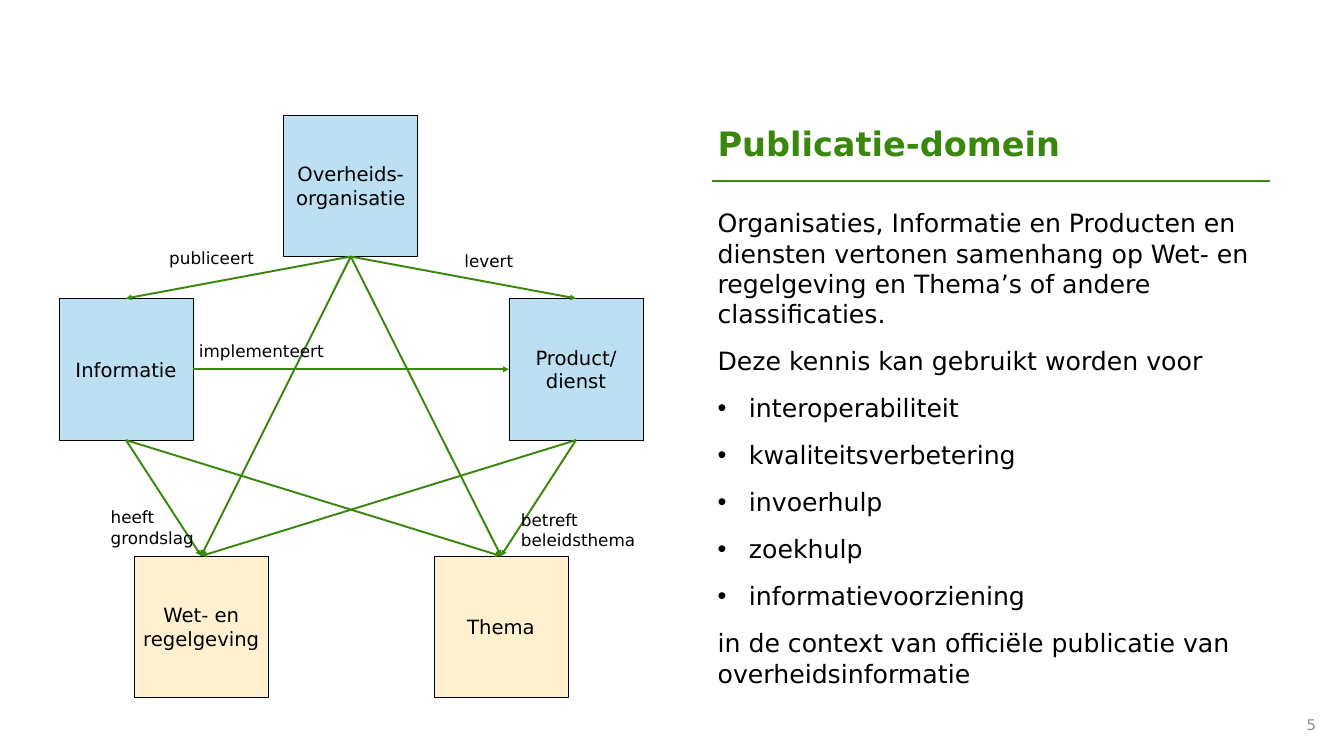
from lxml import etree
from pptx import Presentation
from pptx import util as u
from pptx.dml.color import RGBColor
from pptx.enum import shapes, text
from pptx.oxml import ns

GREEN = RGBColor(0x39, 0x87, 0x0C)
BLUE = RGBColor(0xBC, 0xDF, 0xF1)
CREAM = RGBColor(0xFF, 0xF0, 0xD0)
BLACK = RGBColor(0, 0, 0)
GREY = RGBColor(0x8C, 0x8C, 0x8C)

FONT = "DejaVu Sans"
BOX_WIDTH, BOX_HEIGHT = 6.76, 7.14
TOP, LEFT, BOTTOM, RIGHT = range(4)  # connection sites of a rectangle
BULLET_INDENT = u.Cm(1.58)


def add_bullet(paragraph):
    properties = paragraph._p.get_or_add_pPr()
    properties.set("marL", str(BULLET_INDENT))
    properties.set("indent", str(-BULLET_INDENT))
    font = etree.SubElement(properties, ns.qn("a:buFont"))
    font.set("typeface", "Arial")
    etree.SubElement(properties, ns.qn("a:buChar")).set("char", "•")


def write_text(frame, lines, size=24, color=BLACK, bold=False, wrap=True,
               align=text.PP_ALIGN.LEFT, anchor=text.MSO_ANCHOR.TOP,
               gap=0, spacing=None, bullets=()):
    """Write one paragraph per line; lines listed in bullets get a bullet."""
    frame.word_wrap = wrap
    frame.vertical_anchor = anchor
    for index, line in enumerate(lines):
        paragraph = frame.add_paragraph() if index else frame.paragraphs[0]
        paragraph.alignment = align
        if spacing:
            paragraph.line_spacing = spacing
        if index and gap:
            paragraph.space_before = u.Pt(gap)
        if line in bullets:
            add_bullet(paragraph)
        run = paragraph.add_run()
        run.text = line
        run.font.name = FONT
        run.font.size = u.Pt(size)
        run.font.bold = bold
        run.font.color.rgb = color


class DiagramSlide:
    def __init__(self, slide):
        self.slide = slide

    def text_box(self, left, top, width, height, lines, **style):
        shape = self.slide.shapes.add_textbox(
            u.Cm(left), u.Cm(top), u.Cm(width), u.Cm(height))
        write_text(shape.text_frame, lines, **style)

    def concept(self, left, top, label, fill):
        shape = self.slide.shapes.add_shape(
            shapes.MSO_SHAPE.RECTANGLE, u.Cm(left), u.Cm(top),
            u.Cm(BOX_WIDTH), u.Cm(BOX_HEIGHT))
        shape.shadow.inherit = False
        shape.fill.solid()
        shape.fill.fore_color.rgb = fill
        shape.line.color.rgb = BLACK
        shape.line.width = u.Pt(1)
        write_text(shape.text_frame, [label], size=28,
                   align=text.PP_ALIGN.CENTER, anchor=text.MSO_ANCHOR.MIDDLE)
        return shape

    def line(self, start=(0, 0), end=(0, 0), width=3.0):
        connector = self.slide.shapes.add_connector(
            shapes.MSO_CONNECTOR.STRAIGHT, *map(u.Cm, start + end))
        connector.line.color.rgb = GREEN
        connector.line.width = u.Pt(width)
        etree.SubElement(connector._element.spPr, ns.qn("a:effectLst"))
        return connector

    def arrow(self, source, target, source_site=BOTTOM, target_site=TOP):
        connector = self.line(width=2.75)
        connector.begin_connect(source, source_site)
        connector.end_connect(target, target_site)
        head = etree.SubElement(connector.line._get_or_add_ln(), ns.qn("a:tailEnd"))
        head.set("type", "triangle")


def main():
    presentation = Presentation()
    presentation.slide_width = u.Cm(67.74)
    presentation.slide_height = u.Cm(38.1)
    page = DiagramSlide(presentation.slides.add_slide(presentation.slide_layouts[6]))

    page.line((35.89, 9.14), (64.01, 9.14))
    page.text_box(62.26, 35.5, 4.32, 2.03, ["5"], size=21, color=GREY,
                  align=text.PP_ALIGN.RIGHT, anchor=text.MSO_ANCHOR.MIDDLE)
    page.text_box(35.92, 4.8, 28.08, 3.58, ["Publicatie-domein"], size=48,
                  color=GREEN, bold=True, spacing=0.9,
                  anchor=text.MSO_ANCHOR.BOTTOM)

    uses = ["interoperabiliteit", "kwaliteitsverbetering", "invoerhulp",
            "zoekhulp", "informatievoorziening"]
    page.text_box(35.92, 10.34, 28.08, 24.18, [
        "Organisaties, Informatie en Producten en diensten vertonen samenhang "
        "op Wet- en regelgeving en Thema’s of andere classificaties.",
        "Deze kennis kan gebruikt worden voor",
        *uses,
        "in de context van officiële publicatie van overheidsinformatie",
    ], size=36, gap=24, bullets=uses)

    organisation = page.concept(14.3, 5.79, "Overheids-organisatie", BLUE)
    information = page.concept(2.97, 15.04, "Informatie", BLUE)
    product = page.concept(25.65, 15.04, "Product/ dienst", BLUE)
    legislation = page.concept(6.76, 28.02, "Wet- en regelgeving", CREAM)
    theme = page.concept(21.87, 28.02, "Thema", CREAM)

    for source in (organisation, information, product):
        for target in (legislation, theme):
            page.arrow(source, target)
    for target in (information, product):
        page.arrow(organisation, target)
    page.arrow(information, product, RIGHT, LEFT)

    for left, top, width, height, lines in [
        (8.28, 12.37, 4.9, 1.7, ["publiceert"]),
        (23.16, 12.5, 3.76, 1.7, ["levert"]),
        (9.78, 17.04, 7.52, 1.7, ["implementeert"]),
        (5.33, 25.43, 4.78, 2.54, ["heeft", "grondslag"]),
        (26.01, 25.58, 7.52, 2.46, ["betreft", "beleidsthema"]),
    ]:
        page.text_box(left, top, width, height, lines, wrap=False)

    presentation.save("out.pptx")


if __name__ == "__main__":
    main()
